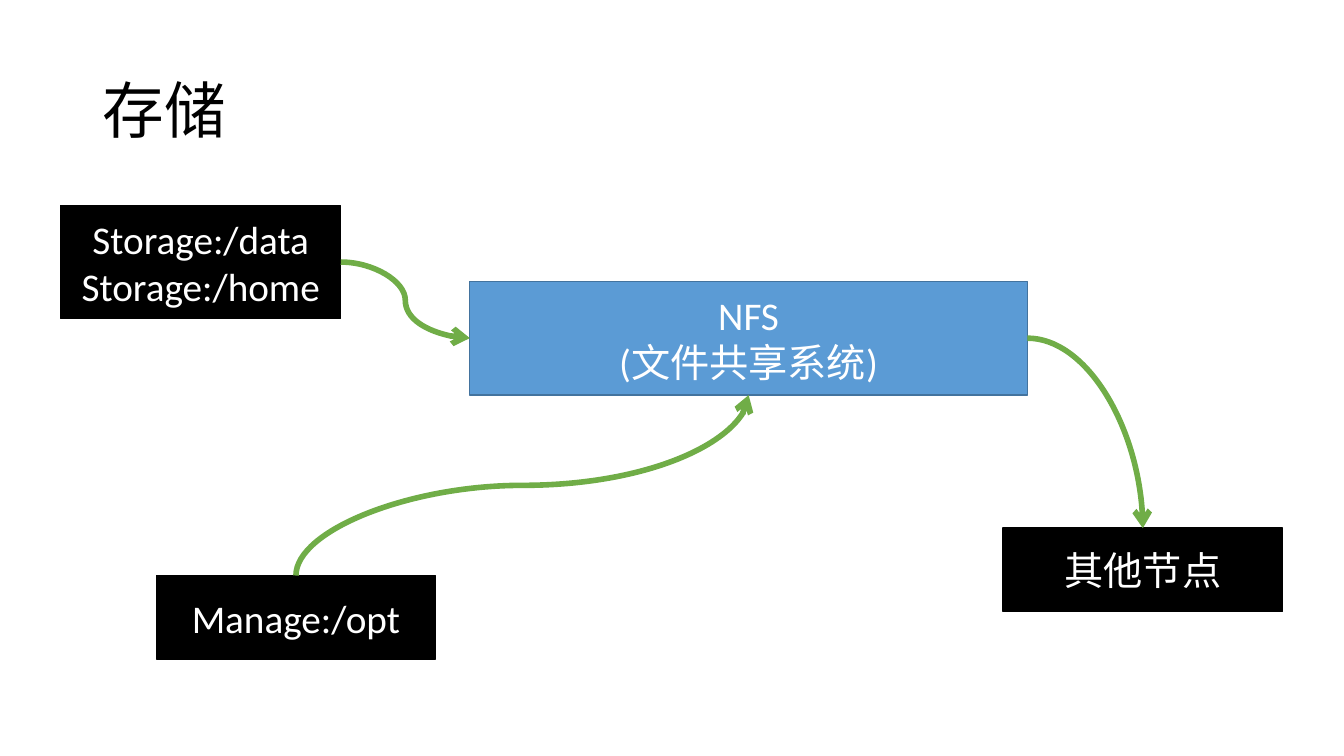
"""Build the storage slide: hosts joined to a shared file system."""
from dataclasses import dataclass

from pptx import Presentation
from pptx.dml.color import RGBColor
from pptx.enum.shapes import MSO_CONNECTOR as Link, MSO_SHAPE as Kind
from pptx.enum.text import MSO_ANCHOR as Anchor, PP_ALIGN as Align
from pptx.oxml.ns import qn
from pptx.util import Inches, Pt

TOP, LEFT, BOTTOM, RIGHT = range(4)


@dataclass
class Box:
    key: str
    lines: list[str]
    left: float
    top: float
    width: float = 2.77
    height: float = 0.83
    fill: str = "000000"
    edge: str = "000000"


@dataclass
class Curve:
    start: str
    out: int
    end: str
    into: int
    preset: str = "curvedConnector3"
    turned: bool = False


BOXES = [
    Box("nfs", ["NFS", "(文件共享系统)"], 4.66, 2.79, 5.53, 1.13, "5B9BD5", "43739E"),
    Box("data", ["Storage:/data", "Storage:/home"], 0.6, 2.04, 2.78, 1.12),
    Box("opt", ["Manage:/opt"], 1.55, 5.71),
    Box("nodes", ["其他节点"], 9.95, 5.24),
]
CURVES = [
    Curve("nfs", RIGHT, "nodes", TOP, "curvedConnector2"),
    Curve("opt", TOP, "nfs", BOTTOM, turned=True),
    Curve("data", RIGHT, "nfs", LEFT),
]


def paint(color, code: str) -> None:
    color.rgb = RGBColor.from_string(code)


def style(para, size: int, code: str) -> None:
    for run in para.runs:
        for key, value in {"name": "Calibri", "size": Pt(size)}.items():
            setattr(run.font, key, value)
        paint(run.font.color, code)


def place(shape, *sides: float) -> None:
    for key, value in zip(("left", "top", "width", "height"), sides):
        setattr(shape, key, Inches(value))


def draw_title(slide, text: str) -> None:
    title = slide.shapes.title
    place(title, 0.92, 0.4, 11.5, 1.45)
    frame = title.text_frame
    frame.text = text
    frame.vertical_anchor = Anchor.MIDDLE
    para = frame.paragraphs[0]
    para.alignment, para.line_spacing = Align.LEFT, 0.9
    style(para, 44, "000000")


def draw_box(slide, box: Box):
    sides = map(Inches, (box.left, box.top, box.width, box.height))
    shape = slide.shapes.add_shape(Kind.RECTANGLE, *sides)
    shape.shadow.inherit = False
    shape.fill.solid()
    paint(shape.fill.fore_color, box.fill)
    paint(shape.line.color, box.edge)
    shape.line.width = Pt(1)
    frame = shape.text_frame
    frame.text = "\n".join(box.lines)
    frame.vertical_anchor = Anchor.MIDDLE
    for para in frame.paragraphs:
        para.alignment = Align.CENTER
        style(para, 28, "FFFFFF")
    return shape


def turn(line) -> None:
    midx, midy = line.left + line.width // 2, line.top + line.height // 2
    wide, high = line.height, line.width
    line.left, line.top = midx - wide // 2, midy - high // 2
    line.width, line.height = wide, high
    form = line._element.spPr.find(qn("a:xfrm"))
    form.attrib.pop("flipV", None)
    form.set("rot", str(270 * 60000))


def draw_curve(slide, curve: Curve, shapes: dict) -> None:
    line = slide.shapes.add_connector(Link.CURVE, 0, 0, 0, 0)
    line.begin_connect(shapes[curve.start], curve.out)
    line.end_connect(shapes[curve.end], curve.into)
    if curve.turned:
        turn(line)
    paint(line.line.color, "70AD47")
    line.line.width = Pt(4)
    props = line._element.spPr
    props.find(qn("a:prstGeom")).set("prst", curve.preset)
    stroke = props.find(qn("a:ln"))
    stroke.append(stroke.makeelement(qn("a:tailEnd"), {"type": "arrow"}))
    props.append(props.makeelement(qn("a:effectLst"), {}))


def main() -> None:
    deck = Presentation()
    deck.slide_width, deck.slide_height = Inches(13.33), Inches(7.5)
    slide = deck.slides.add_slide(deck.slide_layouts[5])
    draw_title(slide, "存储")
    shapes = {box.key: draw_box(slide, box) for box in BOXES}
    for curve in CURVES:
        draw_curve(slide, curve, shapes)
    deck.save("out.pptx")


if __name__ == "__main__":
    main()
